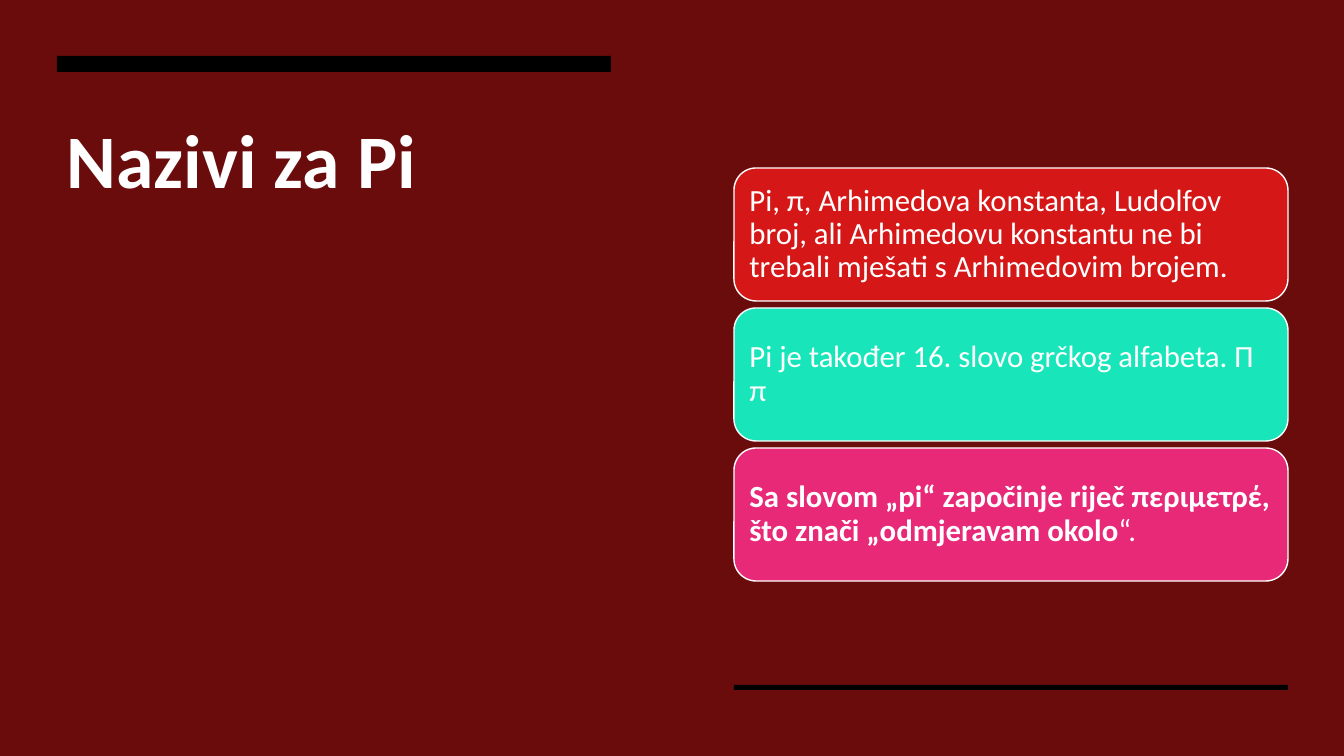
from dataclasses import dataclass

from pptx import Presentation
from pptx.dml.color import RGBColor
from pptx.enum.shapes import MSO_SHAPE
from pptx.enum.text import MSO_ANCHOR, PP_ALIGN
from pptx.shapes.autoshape import Shape
from pptx.slide import Slide
from pptx.util import Emu, Pt

RECT = MSO_SHAPE.RECTANGLE
ROUND = MSO_SHAPE.ROUNDED_RECTANGLE
TOP, MIDDLE = MSO_ANCHOR.TOP, MSO_ANCHOR.MIDDLE
LEFT = PP_ALIGN.LEFT
WIDE, HIGH = 1344, 756
SCALE = 12192000 / WIDE


@dataclass(frozen=True)
class Theme:
    font: str = "Calibri"
    back: str = "6A0C0C"
    bar: str = "000000"
    text: str = "FFFFFF"
    red: str = "D51817"
    mint: str = "19E5BB"
    pink: str = "E72978"
    title: int = 54
    body: int = 22
    edge: int = 1


@dataclass(frozen=True)
class Box:
    left: int
    top: int
    width: int
    height: int


@dataclass(frozen=True)
class Words:
    text: str
    bold: bool = False


@dataclass(frozen=True)
class Card:
    fill: str
    words: tuple[Words, ...]


THEME = Theme()
BARS = (Box(57, 56, 554, 16), Box(734, 685, 554, 5))
TITLE = Box(57, 108, 554, 270)
FIRST = Box(734, 168, 554, 133)
STEP = 140
CARDS = (
    Card(THEME.red, (Words("Pi, π, Arhimedova konstanta, Ludolfov broj, ali Arhimedovu konstantu ne bi trebali mješati s Arhimedovim brojem. "),)),
    Card(THEME.mint, (Words("Pi je također 16. slovo grčkog alfabeta. Π π"),)),
    Card(THEME.pink, (
        Words("Sa slovom „pi“ započinje riječ περιμετρέ, što znači „odmjeravam okolo", True),
        Words("“."),
    )),
)


def px(count: int) -> Emu:
    return Emu(round(count * SCALE))


def place(box: Box) -> tuple[Emu, Emu, Emu, Emu]:
    return px(box.left), px(box.top), px(box.width), px(box.height)


def block(slide: Slide, kind: MSO_SHAPE, box: Box, fill: str) -> Shape:
    shape = slide.shapes.add_shape(kind, *place(box))
    shape.shadow.inherit = False
    shape.fill.solid()
    shape.fill.fore_color.rgb = RGBColor.from_string(fill)
    shape.line.fill.background()
    return shape


def write(shape: Shape, words: tuple[Words, ...], size: int,
          anchor: MSO_ANCHOR, space: float, inset: tuple[int, int]) -> None:
    frame = shape.text_frame
    side, rise = map(px, inset)
    form = {"word_wrap": True, "vertical_anchor": anchor,
            "margin_left": side, "margin_right": side,
            "margin_top": rise, "margin_bottom": rise}
    for name, value in form.items():
        setattr(frame, name, value)
    para = frame.paragraphs[0]
    para.alignment = LEFT
    para.line_spacing = space
    for word in words:
        run = para.add_run()
        run.text = word.text
        style = {"name": THEME.font, "size": Pt(size), "bold": word.bold}
        for name, value in style.items():
            setattr(run.font, name, value)
        run.font.color.rgb = RGBColor.from_string(THEME.text)


def main() -> None:
    deck = Presentation()
    deck.slide_width, deck.slide_height = px(WIDE), px(HIGH)
    slide = deck.slides.add_slide(deck.slide_layouts[6])
    slide.background.fill.solid()
    slide.background.fill.fore_color.rgb = RGBColor.from_string(THEME.back)
    for bar in BARS:
        block(slide, RECT, bar, THEME.bar)
    title = slide.shapes.add_textbox(*place(TITLE))
    write(title, (Words("Nazivi za Pi", True),), THEME.title, TOP, 1.0, (10, 5))
    for row, card in enumerate(CARDS):
        box = Box(FIRST.left, FIRST.top + row * STEP, FIRST.width, FIRST.height)
        shape = block(slide, ROUND, box, card.fill)
        shape.line.color.rgb = RGBColor.from_string(THEME.text)
        shape.line.width = Pt(THEME.edge)
        write(shape, card.words, THEME.body, MIDDLE, 0.9, (9, 9))
    deck.save("out.pptx")


if __name__ == "__main__":
    main()
